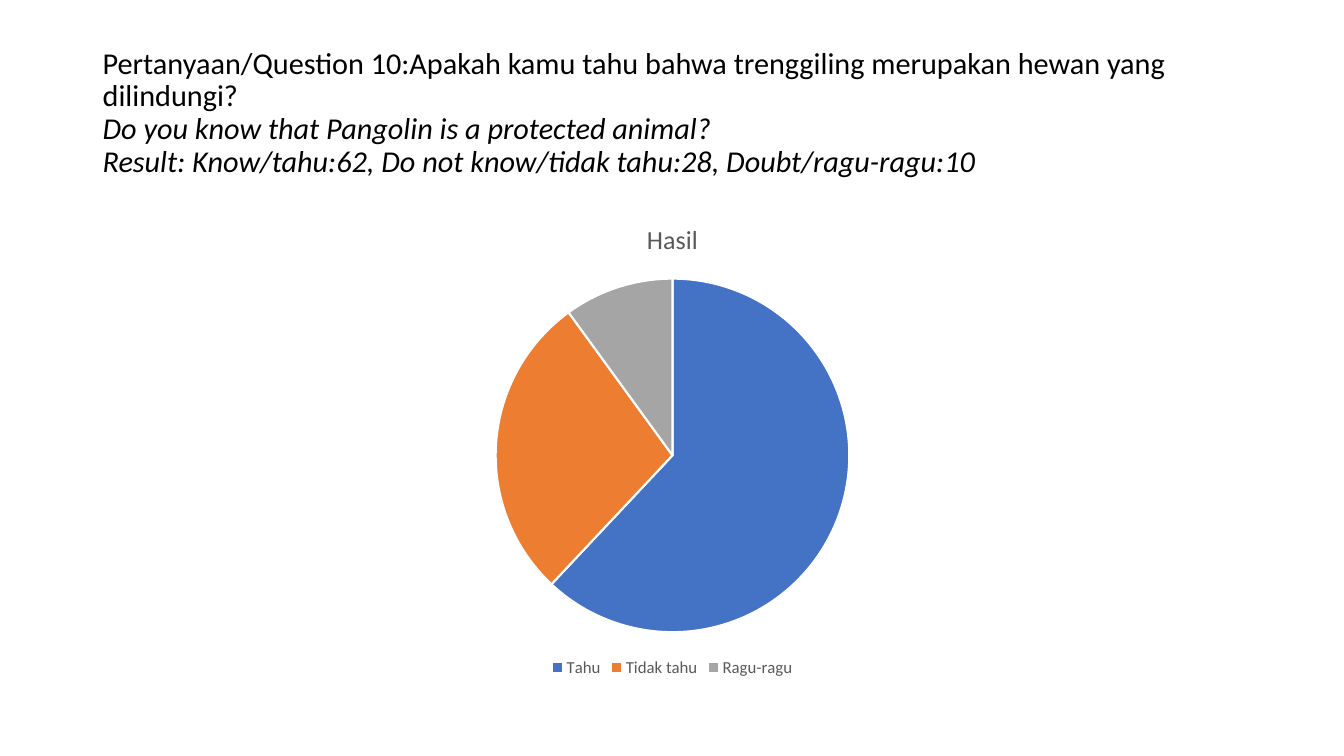
from dataclasses import dataclass

from pptx import Presentation
from pptx.chart.data import CategoryChartData
from pptx.dml.color import RGBColor
from pptx.enum.chart import XL_CHART_TYPE, XL_LEGEND_POSITION
from pptx.enum.text import MSO_ANCHOR
from pptx.util import Inches, Pt

PIE = XL_CHART_TYPE.PIE
BOTTOM = XL_LEGEND_POSITION.BOTTOM
MIDDLE = MSO_ANCHOR.MIDDLE

WIDTH, HEIGHT = 13.33, 7.5
LEFT, SPAN = 0.92, 11.5

QUESTION = "Pertanyaan/Question 10:Apakah kamu tahu bahwa trenggiling merupakan hewan yang dilindungi?"
DETAILS = [
    "Do you know that Pangolin is a protected animal?",
    "Result: Know/tahu:62, Do not know/tidak tahu:28, Doubt/ragu-ragu:10",
]
RESULTS = {"Tahu": 62, "Tidak tahu": 28, "Ragu-ragu": 10}


@dataclass(frozen=True)
class Theme:
    """Colours and type sizes of the slide."""

    font: str = "Calibri"
    ink: str = "000000"
    muted: str = "595959"
    edge: str = "FFFFFF"
    slices: tuple = ("4472C4", "ED7D31", "A5A5A5")
    head: float = 21.6
    title: float = 18.6
    label: float = 12


THEME = Theme()


def style(font, size, color, italic=False):
    """Set the face, size, colour and slant of a font."""
    font.name = THEME.font
    font.size = Pt(size)
    font.bold = False
    font.italic = italic
    font.color.rgb = RGBColor.from_string(color)


def place(top, height):
    """Return the box of a full-width row."""
    return [Inches(n) for n in (LEFT, top, SPAN, height)]


def add_heading(slide, top, height):
    """Add the question, its translation and the result."""
    frame = slide.shapes.add_textbox(*place(top, height)).text_frame
    frame.word_wrap = True
    frame.vertical_anchor = MIDDLE
    frame.text = "\n".join([QUESTION, *DETAILS])
    for index, line in enumerate(frame.paragraphs):
        line.line_spacing = 0.9
        style(line.runs[0].font, THEME.head, THEME.ink, italic=index > 0)


def add_pie(slide, top, height, name, results):
    """Add a pie chart with a title and a legend below."""
    data = CategoryChartData()
    data.categories = list(results)
    data.add_series(name, list(results.values()))
    chart = slide.shapes.add_chart(PIE, *place(top, height), data).chart
    style(chart.font, THEME.label, THEME.muted)

    chart.has_title = True
    title = chart.chart_title
    title.include_in_layout = False
    title.text_frame.text = name
    style(title.text_frame.paragraphs[0].runs[0].font, THEME.title, THEME.muted)

    chart.has_legend = True
    chart.legend.position = BOTTOM
    chart.legend.include_in_layout = False
    style(chart.legend.font, THEME.label, THEME.muted)

    plot = chart.plots[0]
    plot.vary_by_categories = True
    for index, color in enumerate(THEME.slices):
        part = plot.series[0].points[index].format
        part.fill.solid()
        part.fill.fore_color.rgb = RGBColor.from_string(color)
        part.line.color.rgb = RGBColor.from_string(THEME.edge)
        part.line.width = Pt(1.5)


def main():
    """Build and save the slide."""
    deck = Presentation()
    deck.slide_width, deck.slide_height = Inches(WIDTH), Inches(HEIGHT)
    slide = deck.slides.add_slide(deck.slide_layouts[6])
    add_heading(slide, 0.4, 1.45)
    add_pie(slide, 2, 4.76, "Hasil", RESULTS)
    deck.save("out.pptx")


if __name__ == "__main__":
    main()
